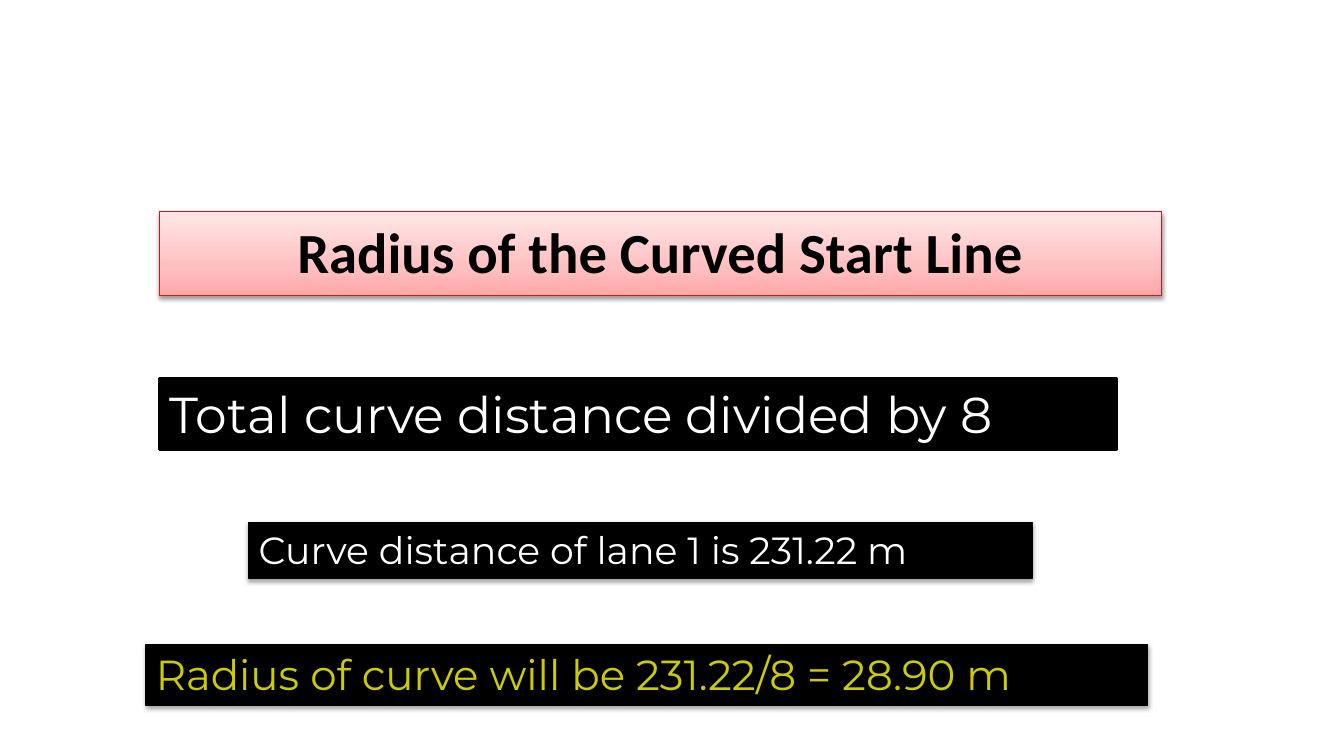
"""Build the slide on the radius of the curved start line."""
from copy import deepcopy

from lxml.etree import SubElement
from pptx import Presentation
from pptx.dml.color import RGBColor
from pptx.enum.text import MSO_ANCHOR, MSO_AUTO_SIZE, PP_ALIGN
from pptx.oxml.ns import qn
from pptx.util import Cm, Pt


def color(value):
    return RGBColor.from_string(value)


def style_box(shape, text, font_name, size, text_color, line_color, line_width, shadow):
    shape.line.color.rgb = color(line_color)
    shape.line.width = Pt(line_width)
    shape.shadow.inherit = False
    if shadow:
        opacity, distance = shadow
        effects = shape.element.spPr.find(qn("a:effectLst"))
        outer = SubElement(effects, qn("a:outerShdw"), blurRad=str(Pt(3.1)),
                           dist=str(Pt(distance)), dir="5400000", rotWithShape="0")
        shade = SubElement(outer, qn("a:srgbClr"), val="000000")
        SubElement(shade, qn("a:alpha"), val=str(opacity * 1000))
    frame = shape.text_frame
    frame.word_wrap = True
    frame.auto_size = MSO_AUTO_SIZE.SHAPE_TO_FIT_TEXT
    frame.vertical_anchor = MSO_ANCHOR.TOP
    paragraph = frame.paragraphs[0]
    paragraph.text = text
    paragraph.font.name = font_name
    paragraph.font.size = Pt(size)
    paragraph.font.color.rgb = color(text_color)
    return paragraph


presentation = Presentation()
presentation.slide_width = Cm(33.87)
presentation.slide_height = Cm(19.05)
slide = presentation.slides.add_slide(presentation.slide_layouts[5])

title = slide.shapes.title
title.left, title.top, title.width, title.height = Cm(4.02), Cm(5.34), Cm(25.25), Cm(1.98)
title.fill.gradient()
title.fill.gradient_angle = 90
first_stop = title.element.spPr.find(".//" + qn("a:gs"))
first_stop.addnext(deepcopy(first_stop))
gradient = [(0, "FFA6A7"), (0.35, "FFC0C1"), (1, "FFE7E7")]
for stop, (position, stop_color) in zip(title.fill.gradient_stops, gradient):
    stop.position = position
    stop.color.rgb = color(stop_color)
heading = style_box(title, "Radius of the Curved Start Line", "Calibri", 40.5,
                    "000000", "CE1820", 0.75, (38, 1.6))
heading.alignment = PP_ALIGN.CENTER
heading.font.bold = True

soft_shadow = (35, 1.8)
steps = [
    ("Total curve distance divided by 8", 4.02, 9.53, 24.13, 1.8, 36, "FFFFFF", 2, None),
    ("Curve distance of lane 1 is 231.22 m", 6.27, 13.16, 19.74, 1.42, 27, "FFFFFF", 0.75, soft_shadow),
    ("Radius of curve will be 231.22/8 = 28.90 m", 3.68, 16.23, 25.25, 1.55, 30, "CCCC00", 0.75, soft_shadow),
]
for text, left, top, width, height, size, text_color, line_width, shadow in steps:
    box = slide.shapes.add_textbox(Cm(left), Cm(top), Cm(width), Cm(height))
    box.fill.solid()
    box.fill.fore_color.rgb = color("000000")
    style_box(box, text, "Montserrat", size, text_color, "000000", line_width, shadow)

presentation.save("out.pptx")
